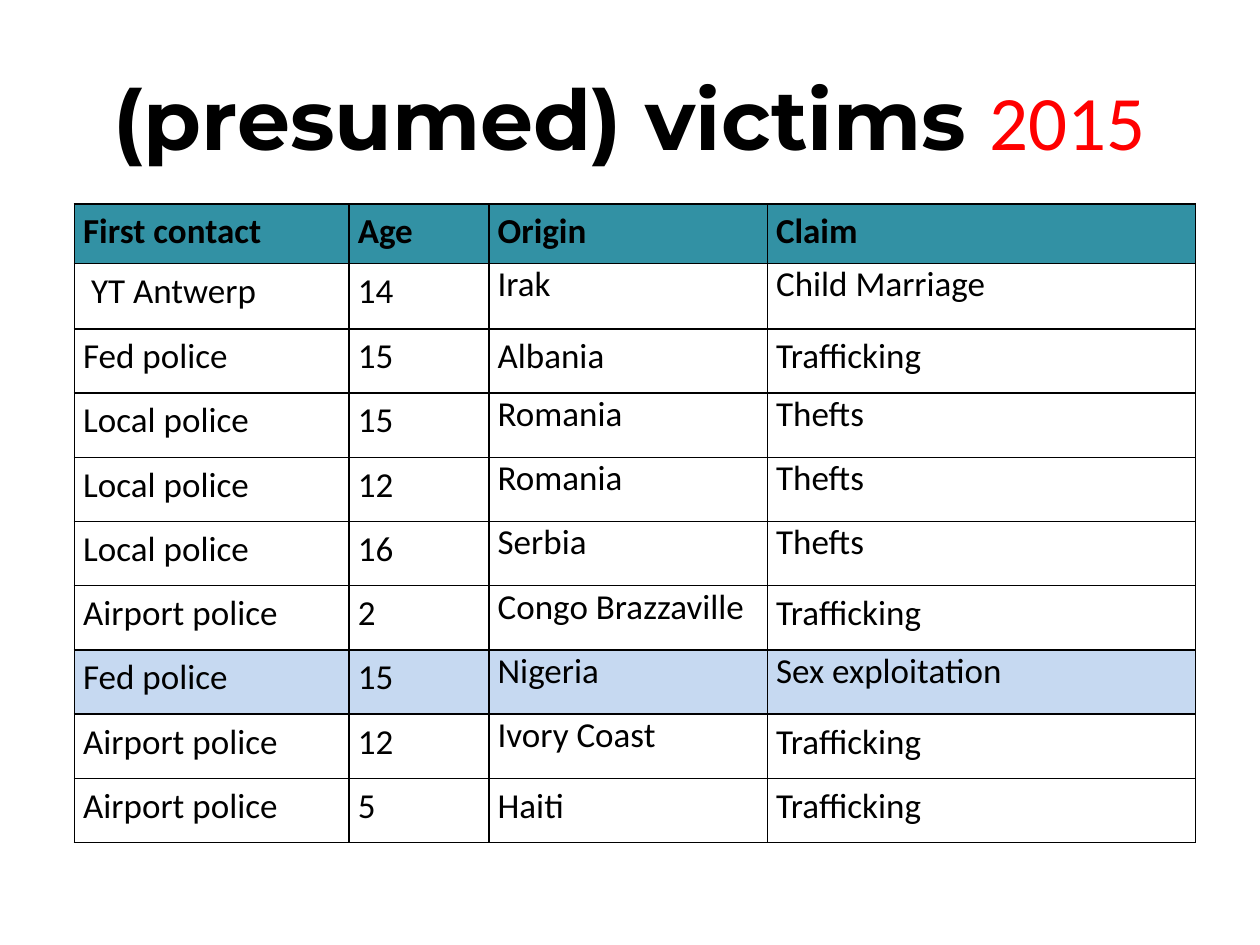
from pptx import Presentation
from pptx.dml.color import RGBColor
from pptx.enum.text import MSO_ANCHOR as Anchor, PP_ALIGN as Align
from pptx.oxml import parse_xml
from pptx.oxml.ns import nsdecls
from pptx.util import Inches, Pt

HEAD = ["First contact", "Age", "Origin", "Claim"]
CASES = [
    [" YT Antwerp", "14", "Irak", "Child Marriage"],
    ["Fed police", "15", "Albania", "Trafficking"],
    ["Local police", "15", "Romania", "Thefts"],
    ["Local police", "12", "Romania", "Thefts"],
    ["Local police", "16", "Serbia", "Thefts"],
    ["Airport police", "2", "Congo Brazzaville", "Trafficking"],
    ["Fed police", "15", "Nigeria", "Sex exploitation"],
    ["Airport police", "12", "Ivory Coast", "Trafficking"],
    ["Airport police", "5", "Haiti", "Trafficking"],
]
WIDTHS = [2.18, 1.11, 2.21, 3.4]
HEIGHTS = [0.47, 0.52] + [0.51] * 8
FILLS = {0: "3291A4", 7: "C6D9F1"}
LOOSE = {"Albania", "Haiti", "Trafficking"}


def paint(code):
    """Turn a hex string into a colour."""
    return RGBColor.from_string(code)


def style(run, size, face="Calibri", code="000000", bold=False):
    """Set the font of a run."""
    font = run.font
    font.size, font.name, font.bold = Pt(size), face, bold
    font.color.rgb = paint(code)


def add_title(slide, wide, high):
    """Add the centred two-tone heading."""
    box = slide.shapes.add_textbox(
        int(wide * 0.05), int(high * 0.04), int(wide * 0.9), int(high / 6))
    frame = box.text_frame
    frame.word_wrap = True
    frame.vertical_anchor = Anchor.MIDDLE
    line = frame.paragraphs[0]
    line.alignment = Align.CENTER
    for text, look in (("(presumed) victims ", (48, "Montserrat", "000000", True)),
                       ("2015", (44, "Calibri", "FF0000"))):
        run = line.add_run()
        run.text = text
        style(run, *look)


def edge(cell):
    """Draw thin black borders on all sides of a cell."""
    props = cell._tc.get_or_add_tcPr()
    for side in ("lnL", "lnR", "lnT", "lnB"):
        props.append(parse_xml(
            f'<a:{side} {nsdecls("a")} w="{Pt(1)}"><a:solidFill>'
            f'<a:srgbClr val="000000"/></a:solidFill></a:{side}>'))


def fill_cell(cell, text, bold, loose, code):
    """Write and format one cell."""
    edge(cell)
    if code:
        cell.fill.solid()
        cell.fill.fore_color.rgb = paint(code)
    else:
        cell.fill.background()
    cell.margin_left = cell.margin_right = Inches(0.07)
    cell.margin_top = cell.margin_bottom = 0
    line = cell.text_frame.paragraphs[0]
    line.text = text
    line.line_spacing = 1.15 if loose else 1.0
    style(line.runs[0], 20, bold=bold)


def add_cases(slide):
    """Add the table of cases."""
    rows = [HEAD] + CASES
    table = slide.shapes.add_table(
        len(rows), len(HEAD), Inches(0.59), Inches(1.62),
        Inches(sum(WIDTHS)), Inches(sum(HEIGHTS))).table
    table.first_row = table.horz_banding = False
    for col, width in zip(table.columns, WIDTHS):
        col.width = Inches(width)
    for r, (row, height) in enumerate(zip(rows, HEIGHTS)):
        table.rows[r].height = Inches(height)
        for c, text in enumerate(row):
            loose = r == 0 or c < 2 or text in LOOSE
            fill_cell(table.cell(r, c), text, r == 0, loose, FILLS.get(r))


def main():
    """Build and save the slide."""
    deck = Presentation()
    deck.slide_width, deck.slide_height = Inches(10), Inches(7.5)
    slide = deck.slides.add_slide(deck.slide_layouts[6])
    add_title(slide, deck.slide_width, deck.slide_height)
    add_cases(slide)
    deck.save("out.pptx")


if __name__ == "__main__":
    main()
